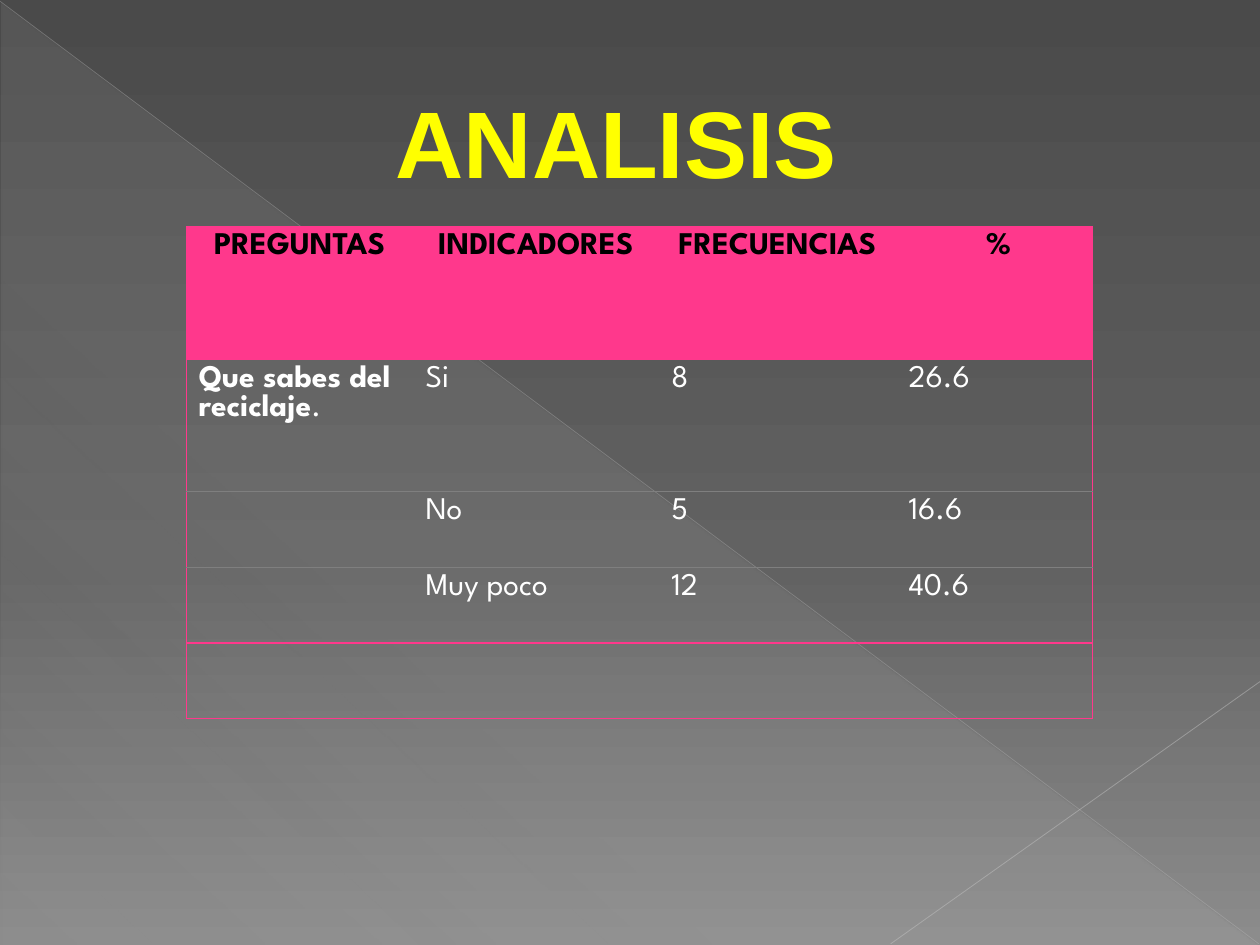
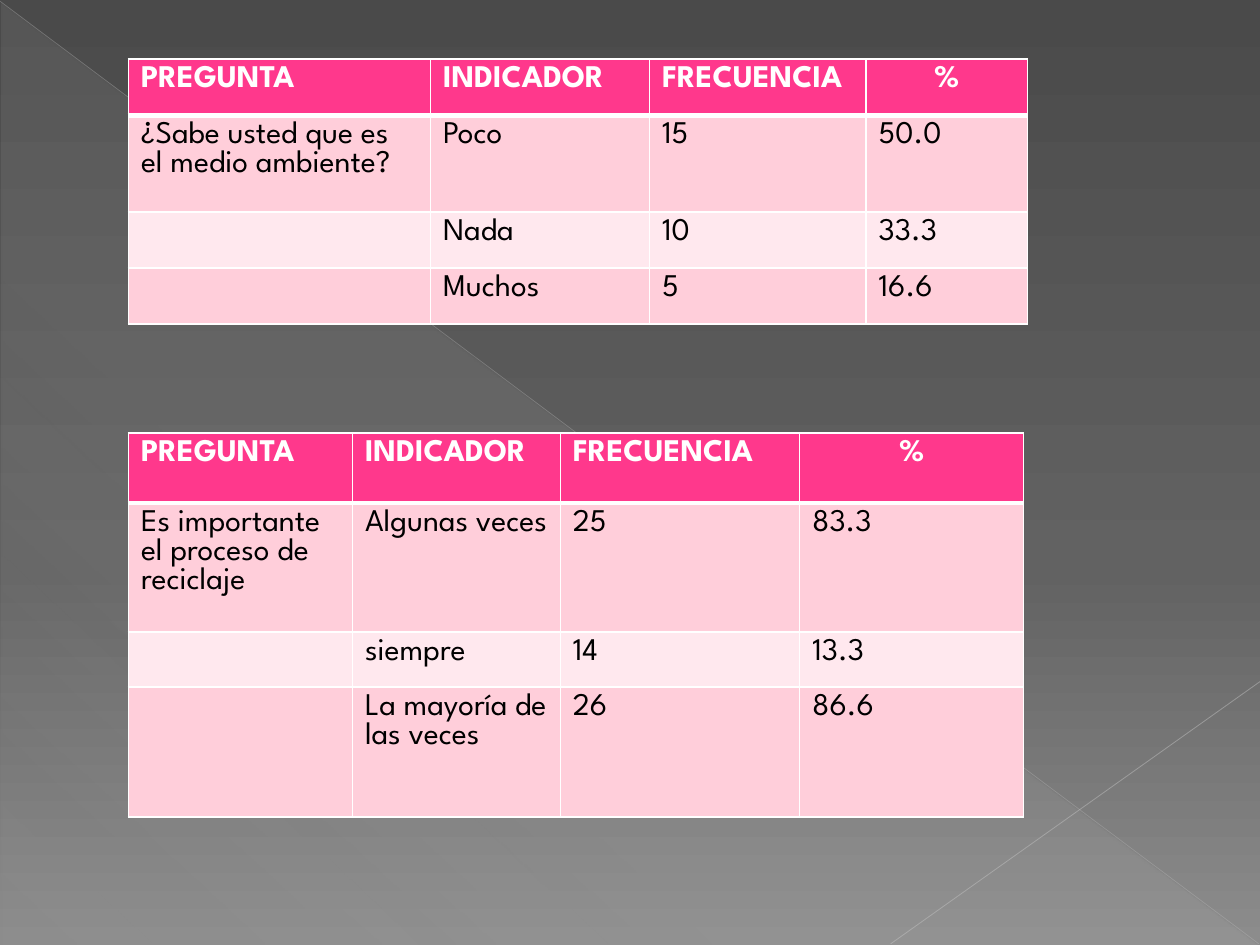
"""Build two slides of survey tables on a shared grey backdrop."""
import lxml.etree
import pptx
import pptx.dml.color
import pptx.enum.shapes
import pptx.enum.text
import pptx.oxml.ns
import pptx.util
from dataclasses import dataclass

Pt = pptx.util.Pt
qn = pptx.oxml.ns.qn
ALIGN = pptx.enum.text.PP_ALIGN


@dataclass(frozen=True)
class Theme:
    pink: str = "FF388C"
    rose: str = "FFCEDA"
    pale: str = "FFE8EE"
    white: str = "FFFFFF"
    black: str = "000000"
    gold: str = "FFFF00"
    hair: str = "7F7F7F"
    back: tuple = ((0, "4A4A4A", 100), (60, "626262", 100), (100, "8C8C8C", 100))
    veil: tuple = ((0, "D2D2D2", 10), (70, "D2D2D2", 8), (100, "D2D2D2", 1))
    face: str = "League Spartan"
    head: str = "Arial"
    size: int = 18
    big: int = 54


LOOK = Theme()
WIDE, HIGH = 720, 540
RAYS = [
    ((0, 0.7), (719.3, 539.3), "BFBFBF", 0.39, 35),
    ((720, 389.5), (509, 539.3), "C6C6C6", 0.47, 45),
]
EDGE = (LOOK.pink, 0.75)
THIN = (LOOK.hair, 0.4)
LINE = (LOOK.white, 1)
BOLD = (LOOK.white, 3)
GRID = dict(across=[LINE, BOLD, LINE, LINE, LINE], down=[LINE] * 5, top=LOOK.white,
            ink=LOOK.black, fills=[LOOK.pink, LOOK.rose, LOOK.pale, LOOK.rose], mid=[3])
OPEN = dict(across=[EDGE, EDGE, THIN, THIN, EDGE, EDGE], down=[EDGE, None, None, None, EDGE],
            top=LOOK.black, ink=LOOK.white, fills=[LOOK.pink] + [None] * 4, mid=range(4))
NAMES = ["PREGUNTA", "INDICADOR", "FRECUENCIA", "%"]

SLIDES = [
    ("ANALISIS", [
        dict(at=(106.5, 129.5), cols=[129.5, 140.5, 135.5, 112.5],
             rows=[75.7, 75.7, 43.3, 43.3, 43.3], look=OPEN, cells=[
                 ["PREGUNTAS", "INDICADORES", "FRECUENCIAS", " %"],
                 [[("Que sabes del reciclaje", True), (".", False)], "Si", "8", "26.6"],
                 ["", "No", "5", "16.6"],
                 ["", "Muy poco", "12", "40.6"],
                 [""] * 4]),
    ]),
    (None, [
        dict(at=(73.4, 33.7), cols=[172.6, 125.2, 123.8, 92.2],
             rows=[32.2, 55.3, 32, 32], look=GRID, cells=[
                 NAMES,
                 ["¿Sabe usted que es el medio ambiente?", "Poco", "15", "50.0"],
                 ["", "Nada", "10", "33.3"],
                 ["", "Muchos", "5", "16.6"]]),
        dict(at=(73.4, 247.5), cols=[128, 118.8, 136.8, 128],
             rows=[39.9, 73.9, 31.2, 74.3], look=GRID, cells=[
                 NAMES,
                 ["Es importante el proceso de reciclaje", "Algunas veces", "25", "83.3"],
                 ["", "siempre", "14", "13.3"],
                 ["", "La mayoría de las veces", "26", "86.6"]]),
    ]),
]


def tint(code):
    return pptx.dml.color.RGBColor.from_string(code)


def node(up, tag, **attrs):
    return lxml.etree.SubElement(up, qn(tag), {k: str(v) for k, v in attrs.items()})


def write(frame, text, color=LOOK.white, size=LOOK.size, face=LOOK.face, bold=False, align=ALIGN.LEFT):
    para = frame.paragraphs[0]
    para.alignment = align
    para.font.size = Pt(size)
    for part, heavy in [(text, bold)] if isinstance(text, str) else text:
        if part:
            run = para.add_run()
            run.text = part
            run.font.name, run.font.size, run.font.bold = face, Pt(size), heavy
            run.font.color.rgb = tint(color)


def shade(fill, root, stops, angle):
    fill.gradient()
    grad = next(root.iter(qn("a:gradFill")))
    for child in list(grad):
        grad.remove(child)
    group = node(grad, "a:gsLst")
    for pos, code, alpha in stops:
        color = node(node(group, "a:gs", pos=pos * 1000), "a:srgbClr", val=code)
        if alpha < 100:
            node(color, "a:alpha", val=alpha * 1000)
    node(grad, "a:lin", ang=angle * 60000, scaled=0)


def backdrop(slide):
    shade(slide.background.fill, slide.element, LOOK.back, 90)
    kind = pptx.enum.shapes.MSO_SHAPE.RIGHT_TRIANGLE
    veil = slide.shapes.add_shape(kind, Pt(0.7), Pt(1.4), Pt(WIDE - 1.4), Pt(HIGH - 1.4))
    veil.shadow.inherit = False
    veil.line.fill.background()
    shade(veil.fill, veil.element, LOOK.veil, 133)
    straight = pptx.enum.shapes.MSO_CONNECTOR.STRAIGHT
    for start, end, code, width, alpha in RAYS:
        ray = slide.shapes.add_connector(straight, *map(Pt, start + end))
        ray.line.width = Pt(width)
        ray.line.color.rgb = tint(code)
        props = ray.element.spPr
        node(next(props.iter(qn("a:srgbClr"))), "a:alpha", val=alpha * 1000)
        node(props, "a:effectLst")


def title(slide, text):
    box = slide.shapes.add_textbox(Pt(125.3), Pt(39.6), Pt(453.6), Pt(56.2))
    frame = box.text_frame
    frame.word_wrap = True
    frame.margin_top, frame.margin_bottom = Pt(8.6), 0
    write(frame, text, color=LOOK.gold, size=LOOK.big, face=LOOK.head, bold=True, align=ALIGN.CENTER)


def border(cell, sides):
    props = cell._tc.get_or_add_tcPr()
    for tag, side in zip(("a:lnL", "a:lnR", "a:lnT", "a:lnB"), sides):
        if side:
            code, width = side
            line = node(props, tag, w=int(Pt(width)))
            node(node(line, "a:solidFill"), "a:srgbClr", val=code)
        else:
            node(node(props, tag, w=0), "a:noFill")


def grid(slide, at, cols, rows, look, cells):
    sizes = [*at, sum(cols), sum(rows)]
    table = slide.shapes.add_table(len(rows), len(cols), *map(Pt, sizes)).table
    table.first_row = table.horz_banding = False
    for col, width in zip(table.columns, cols):
        col.width = Pt(width)
    across, down = look["across"], look["down"]
    for r, line in enumerate(cells):
        table.rows[r].height = Pt(rows[r])
        for c, text in enumerate(line):
            cell = table.cell(r, c)
            border(cell, (down[c], down[c + 1], across[r], across[r + 1]))
            if look["fills"][r]:
                cell.fill.solid()
                cell.fill.fore_color.rgb = tint(look["fills"][r])
            else:
                cell.fill.background()
            first = r == 0
            write(cell.text_frame, text, color=look["top"] if first else look["ink"], bold=first,
                  align=ALIGN.CENTER if first and c in look["mid"] else ALIGN.LEFT)


def main():
    deck = pptx.Presentation()
    deck.slide_width, deck.slide_height = Pt(WIDE), Pt(HIGH)
    for name, tables in SLIDES:
        slide = deck.slides.add_slide(deck.slide_layouts[6])
        backdrop(slide)
        if name:
            title(slide, name)
        for table in tables:
            grid(slide, **table)
    deck.save("out.pptx")


if __name__ == "__main__":
    main()
